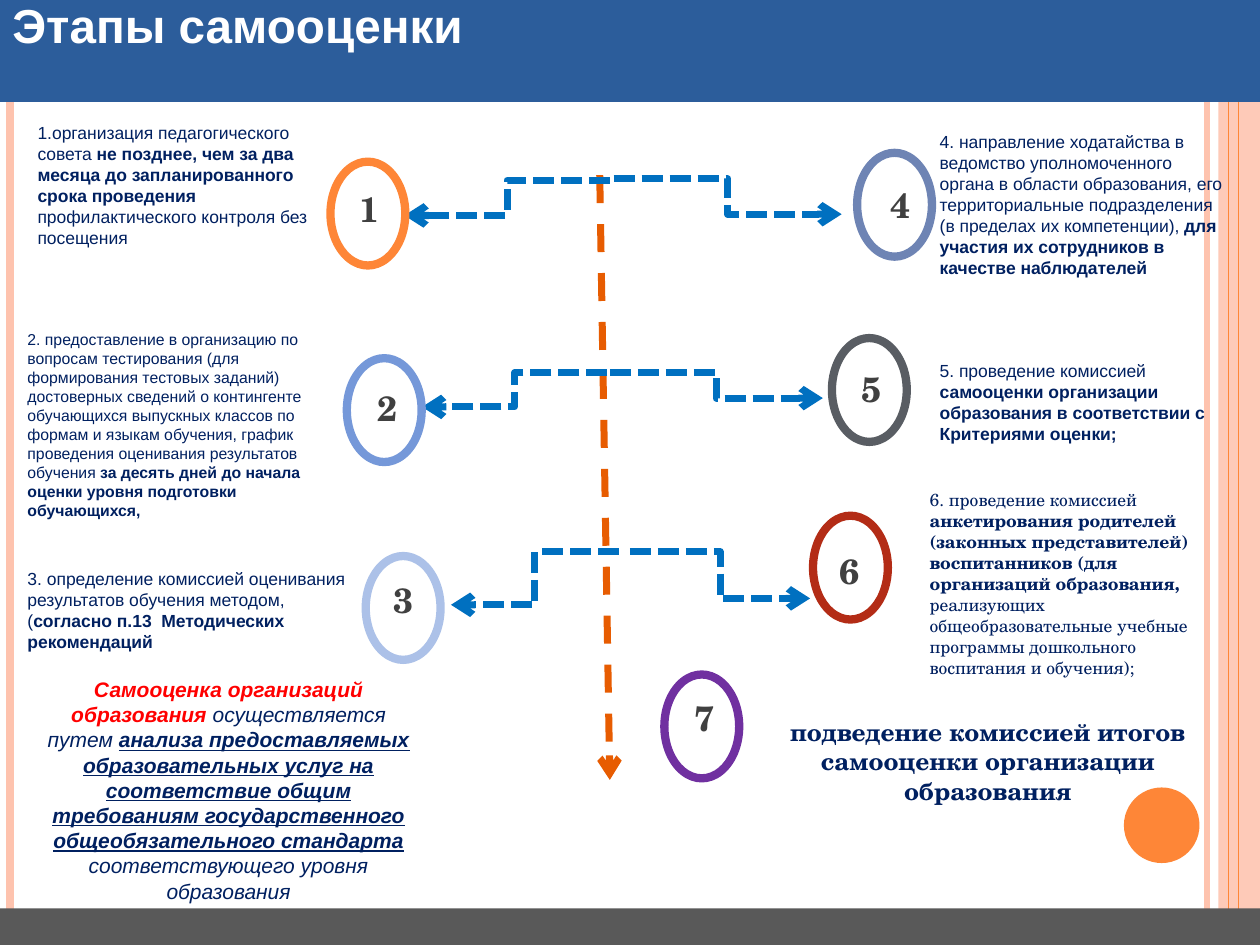
import pptx
import pptx.util
import pptx.dml.color
import pptx.enum.dml
import pptx.enum.shapes
import pptx.enum.text
import pptx.oxml.ns
from dataclasses import dataclass
from lxml import etree

SHAPE = pptx.enum.shapes.MSO_SHAPE
LINK = pptx.enum.shapes.MSO_CONNECTOR
DASH = pptx.enum.dml.MSO_LINE
ALIGN = pptx.enum.text.PP_ALIGN
FIT = pptx.enum.text.MSO_AUTO_SIZE
COLS, ROWS = 100, 75
RING_W, RING_H = 6.6, 8.9
NUM_W, NUM_H = 4.1, 4.5


@dataclass(frozen=True)
class Theme:
    sans: str = "Arial"
    serif: str = "TeX Gyre Schola"
    white: str = "FFFFFF"
    navy: str = "002060"
    band: str = "2C5D9B"
    grey: str = "404040"
    foot: str = "595959"
    red: str = "FF0000"
    peach: str = "FEC3AE"
    orange: str = "FE8637"
    axis: str = "E75C01"
    blue: str = "0070C0"
    tiny: float = 9
    small: float = 10
    body: float = 12
    large: float = 14
    num: float = 20
    title: float = 27.2


def rgb(code):
    return pptx.dml.color.RGBColor.from_string(code)


def add(node, tag, **attrs):
    return etree.SubElement(node, pptx.oxml.ns.qn(tag), **attrs)


def write(frame, runs, align=ALIGN.LEFT, **base):
    """Fill a frame with (text, format) runs; each format overrides base."""
    para = frame.paragraphs[0]
    para.alignment = align
    for text, own in runs:
        style = {**base, **own}
        run = para.add_run()
        run.text = text
        font = run.font
        font.name, font.size = style["face"], pptx.util.Pt(style["size"])
        font.color.rgb = rgb(style["color"])
        font.bold = style.get("bold", False)
        font.italic = style.get("italic", False)
        font.underline = style.get("under", False)


class Board:
    def __init__(self, deck, theme):
        self.deck, self.theme = deck, theme
        self.slide = deck.slides.add_slide(deck.slide_layouts[6])

    def place(self, *spots):
        """Turn alternating columns and rows into slide lengths."""
        units = (self.deck.slide_width / COLS, self.deck.slide_height / ROWS)
        return [round(spot * units[i % 2]) for i, spot in enumerate(spots)]

    def shape(self, kind, box, color, alpha=None):
        item = self.slide.shapes.add_shape(kind, *self.place(*box))
        item.shadow.inherit = False
        item.fill.solid()
        item.fill.fore_color.rgb = rgb(color)
        item.line.fill.background()
        if alpha:
            tint = item.fill._xPr.find(".//" + pptx.oxml.ns.qn("a:srgbClr"))
            add(tint, "a:alpha", val=str(alpha * 1000))
        return item

    def line(self, ends, color, width, kind=LINK.STRAIGHT, dash=None, arrow=False):
        item = self.slide.shapes.add_connector(kind, *self.place(*ends))
        item.line.color.rgb = rgb(color)
        item.line.width = pptx.util.Pt(width)
        if dash:
            item.line.dash_style = dash
        if arrow:
            add(item.line._get_or_add_ln(), "a:tailEnd", type="arrow")
        add(item._element.spPr, "a:effectLst")

    def text(self, box, runs, **style):
        frame = self.slide.shapes.add_textbox(*self.place(*box)).text_frame
        frame.word_wrap = True
        frame.auto_size = FIT.SHAPE_TO_FIT_TEXT
        look = dict(face=self.theme.sans, size=self.theme.small, color=self.theme.navy)
        write(frame, runs, **{**look, **style})

    def ring(self, spot, color):
        ring = self.shape(SHAPE.DONUT, (*spot, RING_W, RING_H), color)
        ring.adjustments[0] = 0.1

    def number(self, spot, num):
        self.text((*spot, NUM_W, NUM_H), [(str(num), {})], align=ALIGN.CENTER, bold=True,
                  face=self.theme.serif, size=self.theme.num, color=self.theme.grey)

    def title(self, text):
        frame = self.shape(SHAPE.RECTANGLE, (0, -0.3, COLS, 8.4), self.theme.band).text_frame
        frame.margin_top = 0
        frame.vertical_anchor = pptx.enum.text.MSO_ANCHOR.TOP
        write(frame, [(text, {})], face=self.theme.sans, size=self.theme.title,
              color=self.theme.white, bold=True)


def main():
    deck = pptx.Presentation()
    deck.slide_width, deck.slide_height = pptx.util.Inches(10), pptx.util.Inches(7.5)
    theme = Theme()
    board = Board(deck, theme)
    bold, plain = {"bold": True}, {}
    mark = {"bold": True, "under": True}

    # Side stripes and footer
    board.shape(SHAPE.RECTANGLE, (96.7, 0, 3.3, ROWS), theme.peach, alpha=87)
    for col, color, width in [(95.8, theme.peach, 3), (0.8, theme.peach, 4.5),
                              (98.3, theme.orange, 0.75), (97.5, theme.orange, 0.75)]:
        board.line((col, 0, col, ROWS), color, width)
    board.shape(SHAPE.OVAL, (89.2, 62.5, 6, 6), theme.orange)
    board.shape(SHAPE.RECTANGLE, (0, 72.1, COLS, 2.9), theme.foot)

    # Central axis and its branches
    board.line((47.6, 13.9, 48.4, 61.9), theme.axis, 4, dash=DASH.DASH, arrow=True)
    for ends in [(48.4, 14.3, 32.1, 17.1), (48.2, 29.6, 33.5, 32.3), (49.1, 43.8, 35.8, 48),
                 (48.7, 14.2, 66.8, 17), (48.4, 29.6, 65.3, 31.6), (50, 43.8, 64.3, 47.5)]:
        board.line(ends, theme.blue, 4, kind=LINK.ELBOW, dash=DASH.SQUARE_DOT, arrow=True)

    # Numbered rings
    rings = [((25.9, 12.5), (27.3, 14.4), theme.orange),
             ((27.2, 28.1), (28.7, 30.2), "7598D9"),
             ((28.7, 43.8), (30, 45.4), "ACC1E8"),
             ((67.7, 11.8), (69.4, 14.1), "6E84B4"),
             ((65.7, 26.5), (67.1, 28.7), "595D63"),
             ((64.2, 40.6), (65.4, 43.1), "B32C16"),
             ((52.4, 53.2), (53.9, 54.8), "7030A0")]
    for num, (spot, label, color) in enumerate(rings, 1):
        board.ring(spot, color)
        board.number(label, num)

    # Step texts
    board.text((2, 9.2, 24, 11.1), [
        ("1.организация педагогического совета ", plain),
        ("не позднее, чем за два месяца до запланированного срока проведения ", bold),
        ("профилактического контроля без  посещения", plain)])
    board.text((1.2, 25.7, 26, 16.2), [
        ("2. предоставление в организацию по вопросам тестирования (для формирования "
         "тестовых заданий) достоверных сведений о контингенте обучающихся выпускных "
         "классов по формам и языкам обучения, график проведения оценивания "
         "результатов обучения ", plain),
        ("за десять дней до начала оценки уровня подготовки обучающихся,", bold)],
        size=theme.tiny)
    board.text((1.2, 44.6, 28.3, 7.9), [
        ("3. определение комиссией оценивания результатов обучения методом, (", plain),
        ("согласно п.13  Методических рекомендаций", bold)])
    board.text((73.6, 9.9, 24.4, 15), [
        ("4. направление ходатайства в ведомство уполномоченного органа в области "
         "образования, его территориальные подразделения (в пределах их "
         "компетенции), ", plain),
        ("для участия их сотрудников в качестве наблюдателей", bold)])
    board.text((73.6, 28.1, 24.4, 7.7), [
        ("5. проведение комиссией ", plain),
        ("самооценки организации образования в соответствии с Критериями оценки;", bold)])
    board.text((72.8, 38.3, 24.3, 16.2), [
        ("6. проведение комиссией ", plain),
        ("анкетирования родителей (законных представителей) воспитанников (для "
         "организаций образования,", bold),
        (" реализующих общеобразовательные учебные программы дошкольного "
         "воспитания и обучения);", plain)], face=theme.serif)
    board.text((60.2, 56.4, 36.4, 8.1), [
        ("подведение комиссией итогов самооценки организации образования", bold)],
        face=theme.serif, size=theme.large, align=ALIGN.CENTER)
    board.text((2, 53.2, 32.3, 19.2), [
        ("Самооценка организаций образования ", {"bold": True, "color": theme.red}),
        ("осуществляется путем ", plain),
        ("анализа предоставляемых образовательных услуг на соответствие общим "
         "требованиям государственного общеобязательного стандарта", mark),
        (" соответствующего уровня образования", plain)],
        size=theme.body, italic=True, align=ALIGN.CENTER)

    board.title("Этапы самооценки")
    deck.save("out.pptx")


if __name__ == "__main__":
    main()
